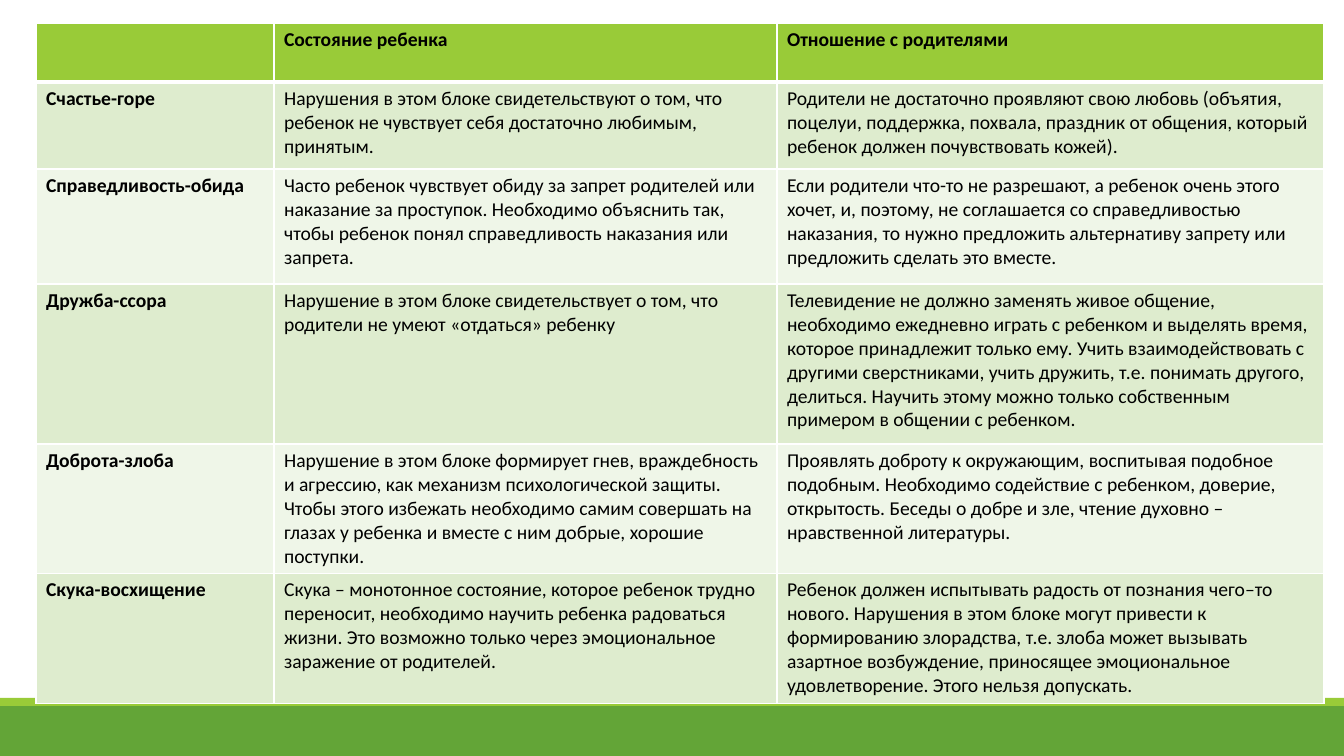
from lxml import etree
from pptx import Presentation
from pptx.dml.color import RGBColor
from pptx.enum.shapes import MSO_SHAPE
from pptx.oxml.ns import qn
from pptx.util import Emu, Pt

RECTANGLE = MSO_SHAPE.RECTANGLE
SLIDE_WIDTH, SLIDE_HEIGHT = 1344, 756
EMU_PER_PX = 12192000 / SLIDE_WIDTH

WHITE, BLACK = "FFFFFF", "000000"
LIME, GREEN = "99CB38", "63A537"
BANDS = ("DEECCE", "EFF6E8")

TABLE_LEFT, TABLE_TOP = 36, 23
COLUMN_WIDTHS = (238, 503, 547)
ROW_HEIGHTS = (59, 87, 115, 160, 129, 130)
ROWS = (
    ("", "Состояние ребенка", "Отношение с родителями"),
    ("Счастье-горе",
     "Нарушения в этом блоке свидетельствуют о том, что ребенок не чувствует себя "
     "достаточно любимым, принятым.",
     "Родители не достаточно проявляют свою любовь (объятия, поцелуи, поддержка, "
     "похвала, праздник от общения, который ребенок должен почувствовать кожей)."),
    ("Справедливость-обида",
     "Часто ребенок чувствует обиду за запрет родителей или наказание за проступок. "
     "Необходимо объяснить так, чтобы ребенок понял справедливость наказания или запрета.",
     "Если родители что-то не разрешают, а ребенок очень этого хочет, и, поэтому, не "
     "соглашается со справедливостью наказания, то нужно предложить альтернативу запрету "
     "или предложить сделать это вместе."),
    ("Дружба-ссора",
     "Нарушение в этом блоке свидетельствует о том, что родители не умеют «отдаться» ребенку",
     "Телевидение не должно заменять живое общение, необходимо ежедневно играть с ребенком "
     "и выделять время, которое принадлежит только ему. Учить взаимодействовать с другими "
     "сверстниками, учить дружить, т.е. понимать другого, делиться. Научить этому можно "
     "только собственным примером в общении с ребенком."),
    ("Доброта-злоба",
     "Нарушение в этом блоке формирует гнев, враждебность и агрессию, как механизм "
     "психологической защиты. Чтобы этого избежать необходимо самим совершать на глазах у "
     "ребенка и вместе с ним добрые, хорошие поступки.",
     "Проявлять доброту к окружающим, воспитывая подобное подобным. Необходимо содействие с "
     "ребенком, доверие, открытость. Беседы о добре и зле, чтение духовно – нравственной "
     "литературы."),
    ("Скука-восхищение",
     "Скука – монотонное состояние, которое ребенок трудно переносит, необходимо научить "
     "ребенка радоваться жизни. Это возможно только через эмоциональное заражение от родителей.",
     "Ребенок должен испытывать радость от познания чего–то нового. Нарушения в этом блоке "
     "могут привести к формированию злорадства, т.е. злоба может вызывать азартное "
     "возбуждение, приносящее эмоциональное удовлетворение. Этого нельзя допускать."),
)


def px(length):
    return Emu(round(length * EMU_PER_PX))


def paint(fill, color):
    fill.solid()
    fill.fore_color.rgb = RGBColor.from_string(color)


def add_band(page, top, height, color):
    """Add a plain bar across the whole slide width."""
    band = page.shapes.add_shape(RECTANGLE, 0, px(top), px(SLIDE_WIDTH), px(height))
    band.shadow.inherit = False
    paint(band.fill, color)
    band.line.fill.background()


def add_borders(cell, widths):
    """Draw white cell borders; widths maps a side letter to points."""
    properties = cell._tc.get_or_add_tcPr()
    for side, width in widths.items():
        line = etree.SubElement(properties, qn(f"a:ln{side}"), w=str(Pt(width)))
        fill = etree.SubElement(line, qn("a:solidFill"))
        etree.SubElement(fill, qn("a:srgbClr"), val=WHITE)


def write(cell, text, bold):
    span = cell.text_frame.paragraphs[0].add_run()
    span.text = text
    font_format = {"name": "Calibri", "size": Pt(14), "bold": bold}
    for name, value in font_format.items():
        setattr(span.font, name, value)
    span.font.color.rgb = RGBColor.from_string(BLACK)


def add_feelings_table(page):
    table = page.shapes.add_table(
        len(ROWS), len(COLUMN_WIDTHS), px(TABLE_LEFT), px(TABLE_TOP),
        px(sum(COLUMN_WIDTHS)), px(sum(ROW_HEIGHTS))).table
    for column, width in zip(table.columns, COLUMN_WIDTHS):
        column.width = px(width)
    for row, height in zip(table.rows, ROW_HEIGHTS):
        row.height = px(height)
    for row_index, texts in enumerate(ROWS):
        is_header = row_index == 0
        color = LIME if is_header else BANDS[(row_index - 1) % 2]
        widths = {"L": 1, "R": 1, "T": 3 if row_index == 1 else 1, "B": 3 if is_header else 1}
        for column_index, text in enumerate(texts):
            cell = table.cell(row_index, column_index)
            add_borders(cell, widths)
            paint(cell.fill, color)
            if text:
                write(cell, text, bold=is_header or column_index == 0)


def main():
    deck = Presentation()
    deck.slide_width, deck.slide_height = px(SLIDE_WIDTH), px(SLIDE_HEIGHT)
    page = deck.slides.add_slide(deck.slide_layouts[6])
    paint(page.background.fill, WHITE)
    add_band(page, 706, 50, GREEN)
    add_band(page, 698, 8, LIME)
    add_feelings_table(page)
    deck.save("out.pptx")


if __name__ == "__main__":
    main()
